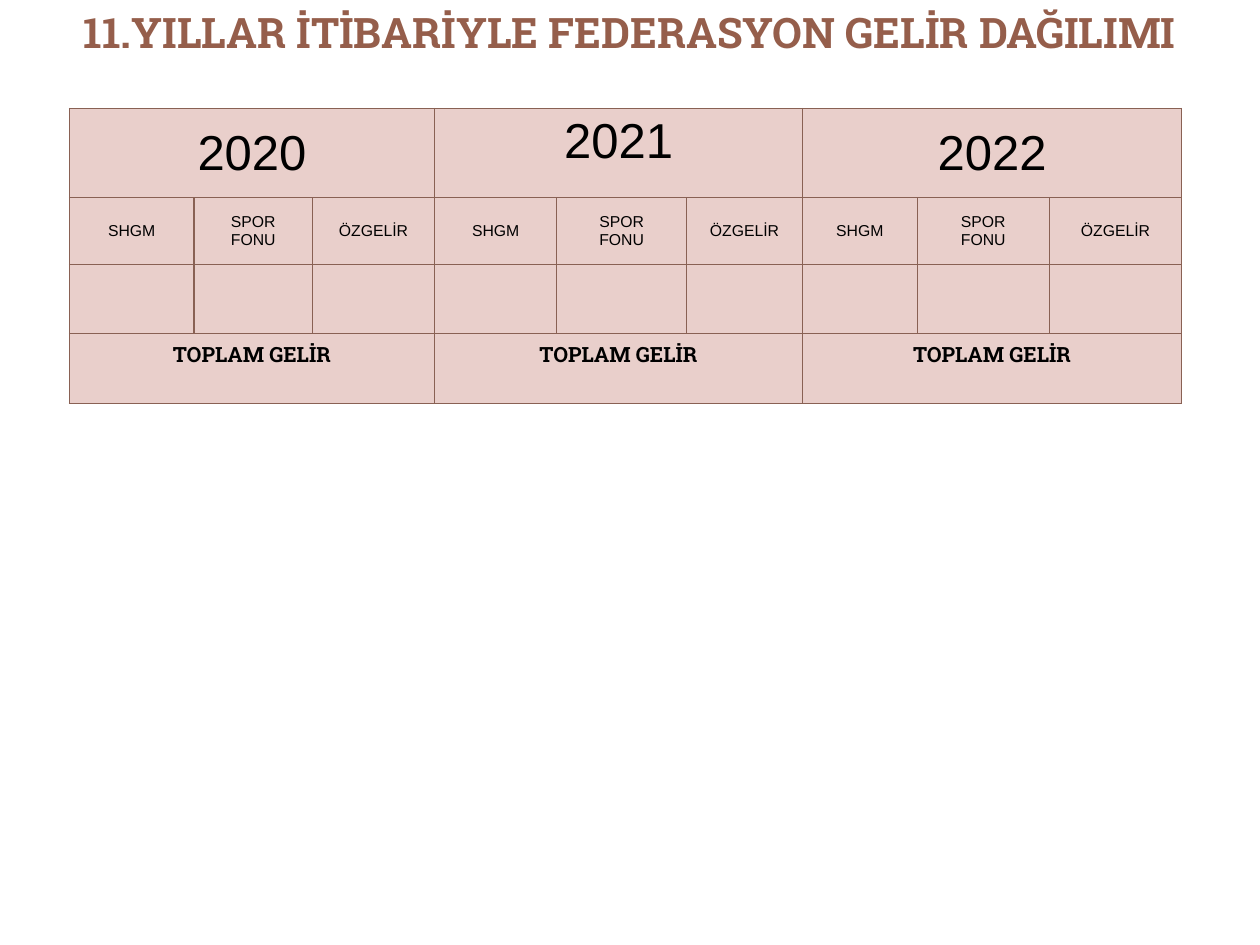
from lxml.etree import SubElement
from pptx import Presentation
from pptx.dml.color import RGBColor
from pptx.enum.text import MSO_ANCHOR, PP_ALIGN
from pptx.oxml.ns import qn
from pptx.util import Inches, Pt

TITLE = "11.YILLAR İTİBARİYLE FEDERASYON GELİR DAĞILIMI"
YEARS = ["2020", "2021", "2022"]
SOURCES = ["SHGM", "SPOR\nFONU", "ÖZGELİR"]
TOTAL = "TOPLAM GELİR"
COLUMN_WIDTHS = [0.99, 0.94, 0.97, 0.97, 1.03, 0.92, 0.91, 1.05, 1.05]
ROW_HEIGHTS = [0.71, 0.53, 0.55, 0.55]
YEAR_ROW, SOURCE_ROW, TOTAL_ROW = 0, 1, 3
TITLE_COLOR, TEXT_COLOR, CELL_COLOR, BORDER_COLOR = "955E4B", "000000", "E9CFCB", "896154"


def style_text(text_frame, text, size, font, color, bold=False):
    """Write centred text and format every run."""
    text_frame.text = text
    for paragraph in text_frame.paragraphs:
        paragraph.alignment = PP_ALIGN.CENTER
        for run in paragraph.runs:
            run.font.size = Pt(size)
            run.font.name = font
            run.font.bold = bold
            run.font.color.rgb = RGBColor.from_string(color)


def style_cell(cell):
    """Give a cell thin borders, its fill and middle anchoring."""
    properties = cell._tc.get_or_add_tcPr()
    for side in ("lnL", "lnR", "lnT", "lnB"):
        border = SubElement(properties, qn(f"a:{side}"), w=str(Pt(0.75)))
        SubElement(SubElement(border, qn("a:solidFill")), qn("a:srgbClr"), val=BORDER_COLOR)
    cell.fill.solid()
    cell.fill.fore_color.rgb = RGBColor.from_string(CELL_COLOR)
    cell.vertical_anchor = MSO_ANCHOR.MIDDLE


def add_title(slide):
    """Place and format the title."""
    title = slide.shapes.title
    title.left, title.top, title.width, title.height = map(Inches, (0.5, 0, 9, 0.93))
    title.text_frame.vertical_anchor = MSO_ANCHOR.TOP
    style_text(title.text_frame, TITLE, 24, "Roboto Slab", TITLE_COLOR, True)


def add_income_table(slide):
    """Build the income table with one group of columns per year."""
    table = slide.shapes.add_table(
        len(ROW_HEIGHTS), len(COLUMN_WIDTHS), Inches(0.55), Inches(0.86),
        Inches(sum(COLUMN_WIDTHS)), Inches(sum(ROW_HEIGHTS))).table
    table.first_row = table.horz_banding = False
    for column, width in zip(table.columns, COLUMN_WIDTHS):
        column.width = Inches(width)
    for row, height in zip(table.rows, ROW_HEIGHTS):
        row.height = Inches(height)
    for cell in table.iter_cells():
        style_cell(cell)

    for group, year in enumerate(YEARS):
        first = group * len(SOURCES)
        last = first + len(SOURCES) - 1
        for row in (YEAR_ROW, TOTAL_ROW):
            table.cell(row, first).merge(table.cell(row, last))
        year_cell, total_cell = table.cell(YEAR_ROW, first), table.cell(TOTAL_ROW, first)
        style_text(year_cell.text_frame, year, 28, "Arial", TEXT_COLOR)
        if year == "2021":
            year_cell.margin_top, year_cell.margin_bottom = 0, Inches(0.19)
        style_text(total_cell.text_frame, TOTAL, 12, "Roboto Slab", TEXT_COLOR, True)
        total_cell.margin_bottom = Inches(0.27)
        for offset, source in enumerate(SOURCES):
            source_cell = table.cell(SOURCE_ROW, first + offset)
            style_text(source_cell.text_frame, source, 9, "Arial", TEXT_COLOR)


def main():
    """Create the slide and save it."""
    presentation = Presentation()
    presentation.slide_width, presentation.slide_height = Inches(10), Inches(7.5)
    slide = presentation.slides.add_slide(presentation.slide_layouts[5])
    add_title(slide)
    add_income_table(slide)
    presentation.save("out.pptx")


if __name__ == "__main__":
    main()
